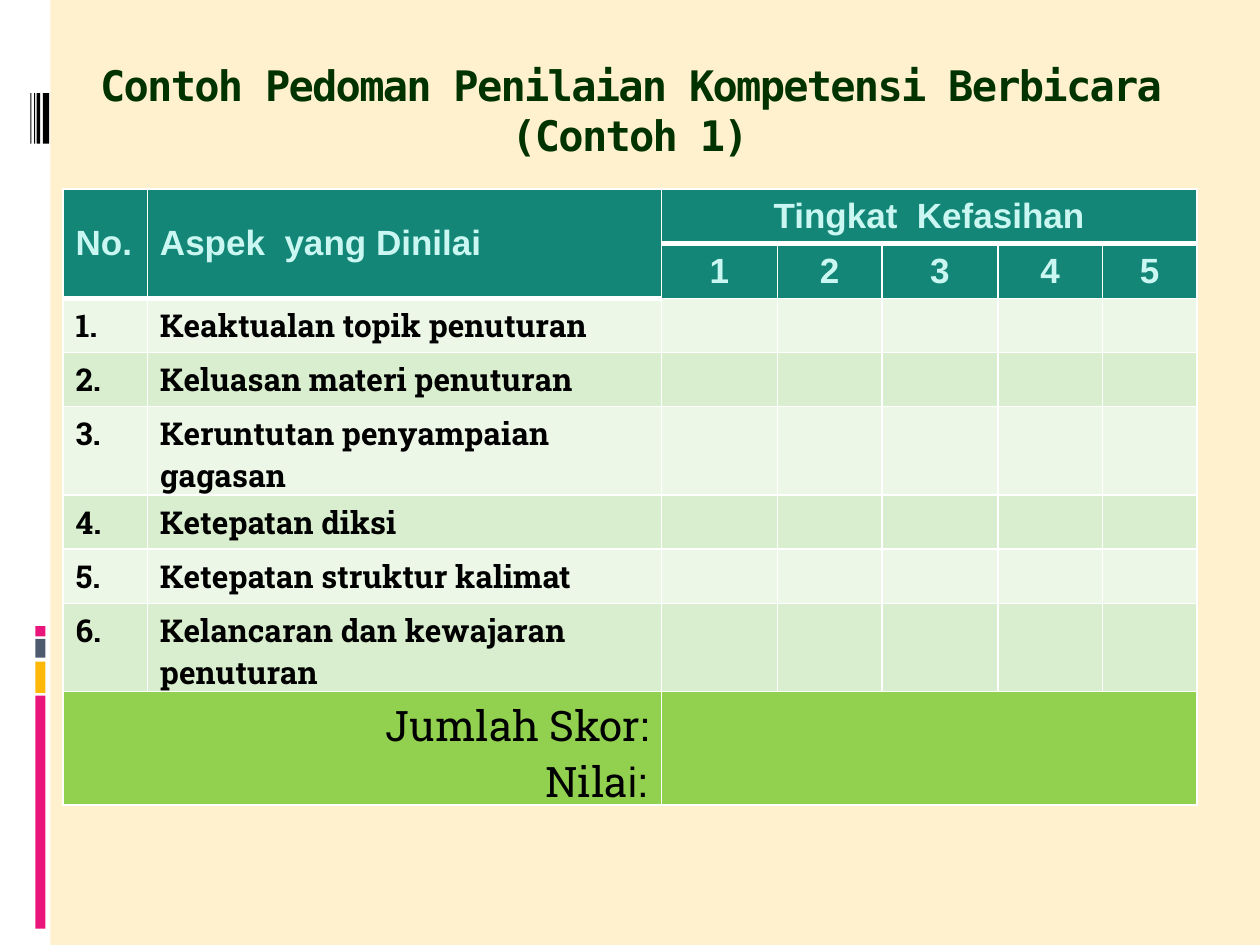
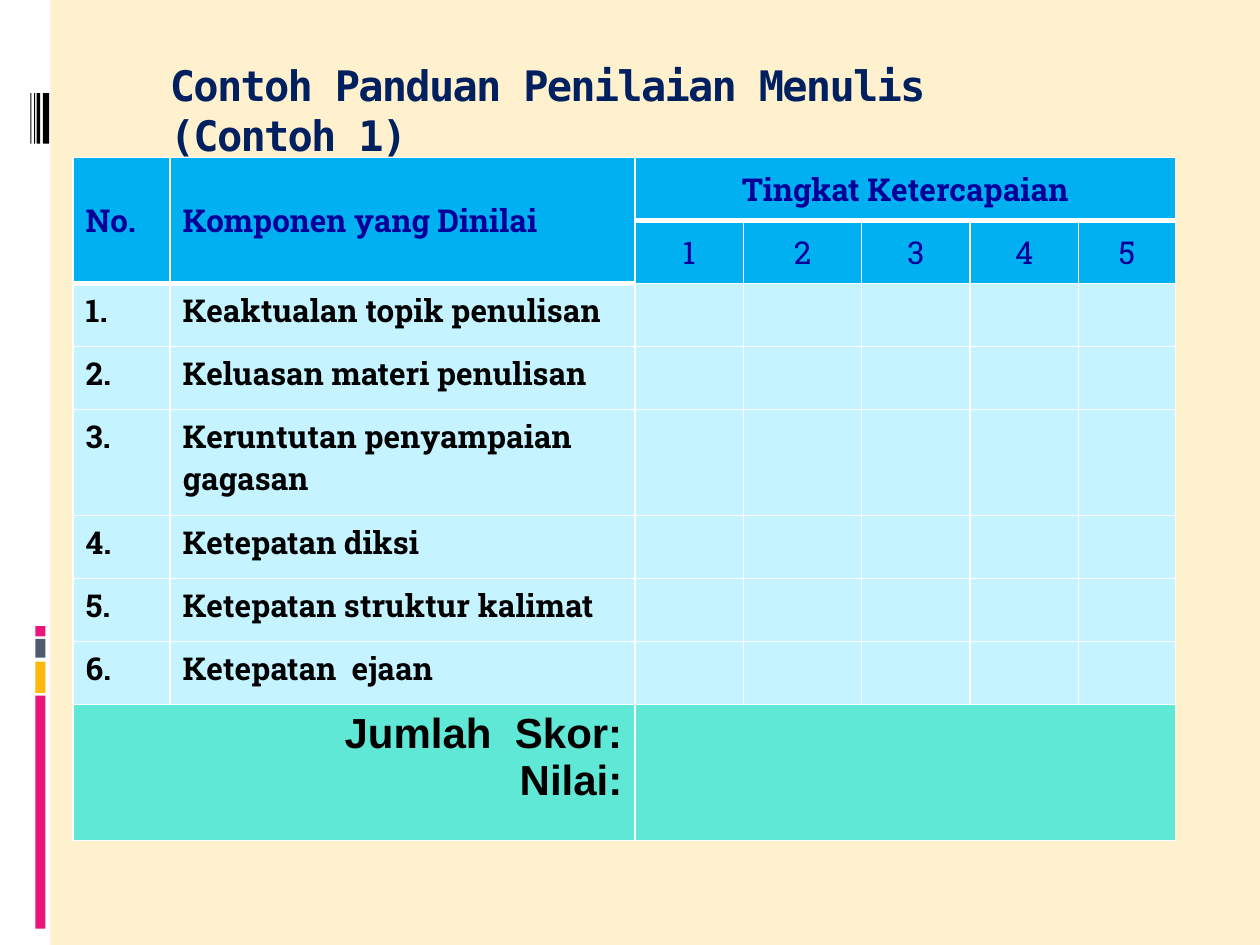
from lxml import etree
from pptx import Presentation
from pptx import util as u
from pptx.dml.color import RGBColor
from pptx.enum import shapes, text
from pptx.oxml import ns

MONO, SLAB, SANS = "DejaVu Sans Mono", "Roboto Slab", "Arial"
CREAM, WHITE, BLACK = "FFF1CE", "FFFFFF", "000000"
PINK, AMBER, SLATE = "EA157A", "FEB80A", "4E5B6F"
LEFT, CENTER, RIGHT = text.PP_ALIGN.LEFT, text.PP_ALIGN.CENTER, text.PP_ALIGN.RIGHT
LEVELS = ["1", "2", "3", "4", "5"]

# Side decoration: top and height of the colour blocks, left and width of the stripes
BLOCKS = [(5.52, 1.85, PINK), (5.25, 0.25, AMBER), (5.07, 0.15, SLATE), (4.97, 0.08, PINK)]
STRIPES = [(0.34, 0.05), (0.29, 0.03), (0.27, 0.01), (0.24, 0.01)]


def rgb(value):
    return RGBColor.from_string(value)


class Deck:
    def __init__(self):
        self.prs = Presentation()
        self.prs.slide_width, self.prs.slide_height = u.Inches(10), u.Inches(7.5)
        self.slide = None

    def new_slide(self):
        self.slide = self.prs.slides.add_slide(self.prs.slide_layouts[6])
        self.slide.background.fill.solid()
        self.slide.background.fill.fore_color.rgb = rgb(CREAM)
        self.bar(0, 0, 0.4, 7.5, WHITE)
        for top, height, color in BLOCKS:
            self.bar(0.28, top, 0.08, height, color)
        for left, width in STRIPES:
            self.bar(left, 0.74, width, 0.4, BLACK)

    def bar(self, left, top, width, height, color):
        bar = self.slide.shapes.add_shape(
            shapes.MSO_SHAPE.RECTANGLE, *map(u.Inches, (left, top, width, height)))
        bar.shadow.inherit = False
        bar.fill.solid()
        bar.fill.fore_color.rgb = rgb(color)
        bar.line.fill.background()

    def style(self, run, size, font, color, bold):
        run.font.size, run.font.name, run.font.bold = u.Pt(size), font, bold
        run.font.color.rgb = rgb(color)

    def title(self, words, left, width, color, align):
        box = self.slide.shapes.add_textbox(*map(u.Inches, (left, 0.42, width, 0.58)))
        box.text_frame.word_wrap = True
        box.text_frame.text = words
        paragraph = box.text_frame.paragraphs[0]
        paragraph.alignment = align
        for run in paragraph.runs:
            self.style(run, 24, MONO, color, True)
            run.font._element.set("spc", "-100")

    def borders(self, cell, top, bottom):
        props = cell._tc.get_or_add_tcPr()
        for side, width in (("L", 1), ("R", 1), ("T", top), ("B", bottom)):
            line = etree.SubElement(props, ns.qn("a:ln" + side), w=str(u.Pt(width)))
            fill = etree.SubElement(line, ns.qn("a:solidFill"))
            etree.SubElement(fill, ns.qn("a:srgbClr"), val=WHITE)

    def label(self, cell, words, size, font, color, bold=True, align=LEFT):
        cell.text = words
        for paragraph in cell.text_frame.paragraphs:
            paragraph.alignment = align
            for run in paragraph.runs:
                self.style(run, size, font, color, bold)

    def score_table(self, left, top, columns, rows, heading, aspects, total):
        """Rating sheet: two heading rows, one row per aspect, one total row."""
        frame = self.slide.shapes.add_table(
            len(rows), len(columns),
            *map(u.Inches, (left, top, sum(columns), sum(rows))))
        table = frame.table
        table.first_row = table.horz_banding = False
        for column, width in zip(table.columns, columns):
            column.width = u.Inches(width)
        for row, height in zip(table.rows, rows):
            row.height = u.Inches(height)
        last = len(rows) - 1

        # Fills, with a thick rule below each heading cell of the first row
        for r in range(len(rows)):
            for c in range(len(columns)):
                cell = table.cell(r, c)
                thick_top = r == (2 if c < 2 else 1)
                thick_bottom = r == 0 or (r == 1 and c < 2)
                self.borders(cell, 3 if thick_top else 1, 3 if thick_bottom else 1)
                fill = (heading["fill"] if r < 2 else total["fill"] if r == last
                        else aspects["fills"][r % 2])
                cell.fill.solid()
                cell.fill.fore_color.rgb = rgb(fill)

        for c in (0, 1):
            table.cell(0, c).merge(table.cell(1, c))
        table.cell(0, 2).merge(table.cell(0, 6))
        table.cell(last, 0).merge(table.cell(last, 1))
        table.cell(last, 2).merge(table.cell(last, 6))

        # Headings
        look = heading["size"], heading["font"], heading["color"]
        for c, words in enumerate(heading["words"]):
            self.label(table.cell(0, c), words, *look, align=CENTER if c == 2 else LEFT)
        for c, level in enumerate(LEVELS, 2):
            self.label(table.cell(1, c), level, *look, heading["bold_levels"], CENTER)
        for r in (0, 1):
            for c in range(len(columns)):
                table.cell(r, c).vertical_anchor = text.MSO_ANCHOR.MIDDLE

        # Aspects
        for number, aspect in enumerate(aspects["words"], 1):
            self.label(table.cell(number + 1, 0), f"{number}.", 18, SLAB, BLACK)
            self.label(table.cell(number + 1, 1), aspect, 18, SLAB, BLACK)

        # Total
        body = table.cell(last, 0).text_frame
        for index, parts in enumerate(total["lines"]):
            paragraph = body.add_paragraph() if index else body.paragraphs[0]
            paragraph.alignment = RIGHT
            for words, font in parts:
                run = paragraph.add_run()
                run.text = words
                self.style(run, 24, font, BLACK, total["bold"])


def main():
    deck = Deck()

    # Speaking
    deck.new_slide()
    deck.title("Contoh Pedoman Penilaian Kompetensi Berbicara (Contoh 1)",
               0.5, 9, "003300", CENTER)
    deck.score_table(
        0.5, 1.5, [0.67, 4.08, 0.92, 0.83, 0.92, 0.83, 0.75], [0.43] * 9,
        heading=dict(words=["No.", "Aspek  yang Dinilai", "Tingkat  Kefasihan"],
                     size=20, font=SANS, color="CAF7F1", fill="138677", bold_levels=True),
        aspects=dict(words=["Keaktualan topik penuturan", "Keluasan materi penuturan",
                            "Keruntutan penyampaian gagasan", "Ketepatan diksi",
                            "Ketepatan struktur kalimat",
                            "Kelancaran dan kewajaran penuturan"],
                     fills=["ECF7E8", "D8EECE"]),
        total=dict(lines=[[("Jumlah Skor:", SLAB)], [("Nila", SLAB), ("i:", SANS)]],
                   fill="92D050", bold=False))

    # Writing
    deck.new_slide()
    deck.title("Contoh Panduan Penilaian Menulis (Contoh 1)", 1.25, 7.58, "002060", LEFT)
    deck.score_table(
        0.58, 1.25, [0.77, 3.69, 0.86, 0.94, 0.86, 0.86, 0.77],
        [0.5] * 4 + [0.84] + [0.5] * 3 + [1.08],
        heading=dict(words=["No.", "Komponen yang Dinilai", "Tingkat Ketercapaian"],
                     size=18, font=SLAB, color="000099", fill="00B0F0", bold_levels=False),
        aspects=dict(words=["Keaktualan topik penulisan", "Keluasan materi penulisan",
                            "Keruntutan penyampaian gagasan", "Ketepatan diksi",
                            "Ketepatan struktur kalimat", "Ketepatan  ejaan"],
                     fills=["C5F3FF", "C5F3FF"]),
        total=dict(lines=[[("Jumlah  Skor:", SANS)], [("Nilai:", SANS)]],
                   fill="5FE8D6", bold=True))

    deck.prs.save("out.pptx")


if __name__ == "__main__":
    main()
